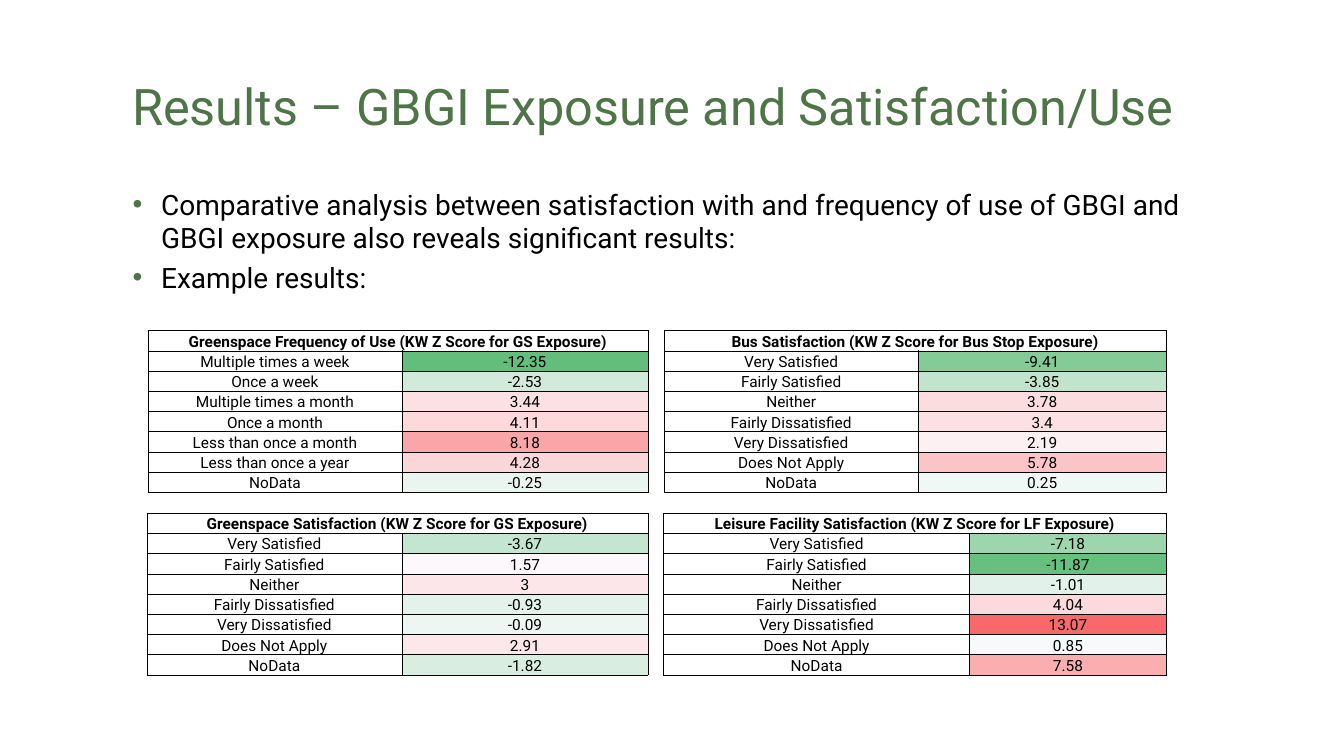
"""Builds the slide on GBGI exposure and satisfaction or use."""
from dataclasses import dataclass
from lxml import etree
from pptx import Presentation, util as u
from pptx.dml.color import RGBColor
from pptx.enum import text
from pptx.oxml import ns

TITLE = "Results – GBGI Exposure and Satisfaction/Use"
BULLETS = [
    "Comparative analysis between satisfaction with and frequency of use of GBGI and "
    "GBGI exposure also reveals significant results:",
    "Example results:",
]
FREQUENCIES = ["Multiple times a week", "Once a week", "Multiple times a month", "Once a month",
               "Less than once a month", "Less than once a year", "NoData"]
RATINGS = ["Very Satisfied", "Fairly Satisfied", "Neither", "Fairly Dissatisfied",
           "Very Dissatisfied", "Does Not Apply", "NoData"]
TABLES = [
    dict(heading="Greenspace Frequency of Use (KW Z Score for GS Exposure)", labels=FREQUENCIES,
         scores=[-12.35, -2.53, 3.44, 4.11, 8.18, 4.28, -0.25], widths=(6.4, 6.2)),
    dict(heading="Bus Satisfaction (KW Z Score for Bus Stop Exposure)", labels=RATINGS,
         scores=[-9.41, -3.85, 3.78, 3.4, 2.19, 5.78, 0.25], widths=(6.4, 6.25)),
    dict(heading="Greenspace Satisfaction (KW Z Score for GS Exposure)", labels=RATINGS,
         scores=[-3.67, 1.57, 3, -0.93, -0.09, 2.91, -1.82], widths=(6.43, 6.2)),
    dict(heading="Leisure Facility Satisfaction (KW Z Score for LF Exposure)", labels=RATINGS,
         scores=[-7.18, -11.87, -1.01, 4.04, 13.07, 0.85, 7.58], widths=(7.72, 4.95)),
]
COLUMN_RIGHTS = (16.33, 29.39)
ROW_TOPS = (8.33, 12.93)
ROW_HEIGHT = 0.51


@dataclass(frozen=True)
class Theme:
    font: str = "Roboto"
    title_size: int = 36
    body_size: int = 20
    table_size: int = 11
    green: str = "4E7448"
    black: str = "000000"
    white: str = "FFFFFF"
    low: tuple = (0x63, 0xBE, 0x7B)
    middle: tuple = (0xFC, 0xFC, 0xFF)
    high: tuple = (0xF8, 0x69, 0x6B)


THEME = Theme()


def add_run(paragraph, words, size, color, bold=False):
    run = paragraph.add_run()
    run.text = words
    run.font.name = THEME.font
    run.font.size = u.Pt(size)
    run.font.bold = bold
    run.font.color.rgb = RGBColor.from_string(color)


def place(shape, left, top, width, height):
    shape.left, shape.top, shape.width, shape.height = map(u.Cm, (left, top, width, height))
    frame = shape.text_frame
    frame.margin_left = frame.margin_right = frame.margin_top = frame.margin_bottom = 0
    frame.word_wrap = True
    frame.auto_size = text.MSO_AUTO_SIZE.NONE
    frame.vertical_anchor = text.MSO_ANCHOR.TOP
    return frame


def add_bullet(paragraph):
    properties = paragraph._p.get_or_add_pPr()
    properties.set("marL", str(u.Cm(0.73)))
    properties.set("indent", str(-u.Cm(0.72)))
    color = etree.SubElement(properties, ns.qn("a:buClr"))
    etree.SubElement(color, ns.qn("a:srgbClr"), val=THEME.green)
    etree.SubElement(properties, ns.qn("a:buFont"), typeface="Arial")
    etree.SubElement(properties, ns.qn("a:buChar"), char="•")


def scale_color(score, low, middle, high):
    if score < middle:
        start, end, share = THEME.low, THEME.middle, (score - low) / (middle - low)
    else:
        start, end, share = THEME.middle, THEME.high, (score - middle) / (high - middle)
    return "%02X%02X%02X" % tuple(a + int((b - a) * share) for a, b in zip(start, end))


def style_cell(cell, fill):
    properties = cell._tc.get_or_add_tcPr()
    for side in ("lnL", "lnR", "lnT", "lnB"):
        line = etree.SubElement(properties, ns.qn("a:" + side), w=str(u.Pt(0.5)))
        paint = etree.SubElement(line, ns.qn("a:solidFill"))
        etree.SubElement(paint, ns.qn("a:srgbClr"), val=THEME.black)
    cell.fill.solid()
    cell.fill.fore_color.rgb = RGBColor.from_string(fill)
    cell.margin_left = cell.margin_right = cell.margin_top = u.Cm(0.02)
    cell.margin_bottom = 0
    cell.vertical_anchor = text.MSO_ANCHOR.BOTTOM


def write_cell(cell, words, bold=False):
    paragraph = cell.text_frame.paragraphs[0]
    paragraph.alignment = text.PP_ALIGN.CENTER
    add_run(paragraph, words, THEME.table_size, THEME.black, bold)


def add_score_table(slide, content, right, top, limits):
    rows = len(content["labels"]) + 1
    width = sum(content["widths"])
    frame = slide.shapes.add_table(rows, 2, u.Cm(right - width), u.Cm(top),
                                   u.Cm(width), u.Cm(rows * ROW_HEIGHT))
    table = frame.table
    table.first_row = table.horz_banding = False
    for column, column_width in zip(table.columns, content["widths"]):
        column.width = u.Cm(column_width)
    for row in table.rows:
        row.height = u.Cm(ROW_HEIGHT)
    for cell in table.rows[0].cells:
        style_cell(cell, THEME.white)
    table.cell(0, 0).merge(table.cell(0, 1))
    write_cell(table.cell(0, 0), content["heading"], bold=True)
    for number, (label, score) in enumerate(zip(content["labels"], content["scores"]), 1):
        fills = (THEME.white, scale_color(score, *limits))
        for column, (words, fill) in enumerate(zip((label, str(score)), fills)):
            cell = table.cell(number, column)
            style_cell(cell, fill)
            write_cell(cell, words)


def main():
    presentation = Presentation()
    presentation.slide_width, presentation.slide_height = u.Cm(33.87), u.Cm(19.05)
    slide = presentation.slides.add_slide(presentation.slide_layouts[1])

    title = place(slide.shapes.title, 3.33, 1.9, 27.6, 2.82).paragraphs[0]
    title.alignment = text.PP_ALIGN.LEFT
    add_run(title, TITLE, THEME.title_size, THEME.green)

    body = place(slide.placeholders[1], 3.33, 4.72, 27.6, 12.8)
    for index, words in enumerate(BULLETS):
        paragraph = body.add_paragraph() if index else body.paragraphs[0]
        add_bullet(paragraph)
        paragraph.space_before = u.Pt(4 if index else 0)
        add_run(paragraph, words, THEME.body_size, THEME.black)

    scores = sorted(score for content in TABLES for score in content["scores"])
    half = len(scores) // 2
    limits = (scores[0], (scores[half - 1] + scores[half]) / 2, scores[-1])
    for index, content in enumerate(TABLES):
        row, column = divmod(index, 2)
        add_score_table(slide, content, COLUMN_RIGHTS[column], ROW_TOPS[row], limits)

    presentation.save("out.pptx")


if __name__ == "__main__":
    main()
